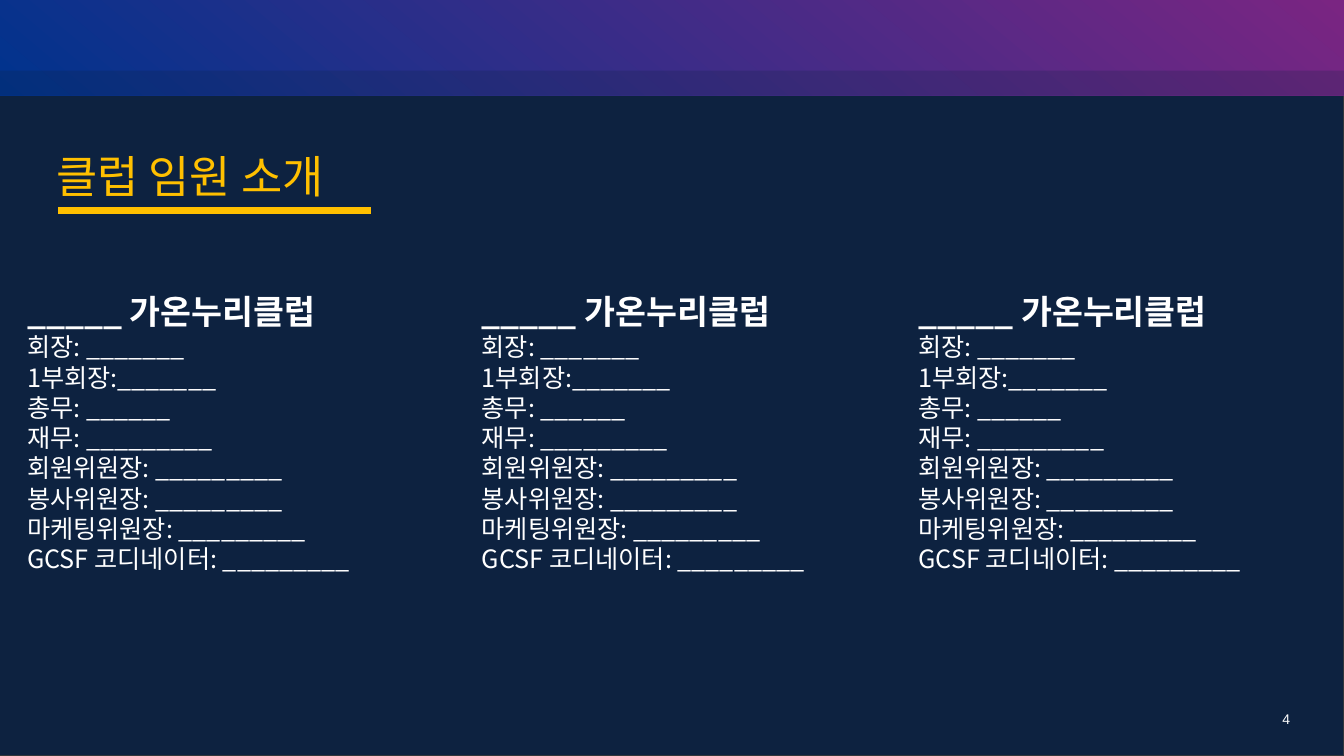
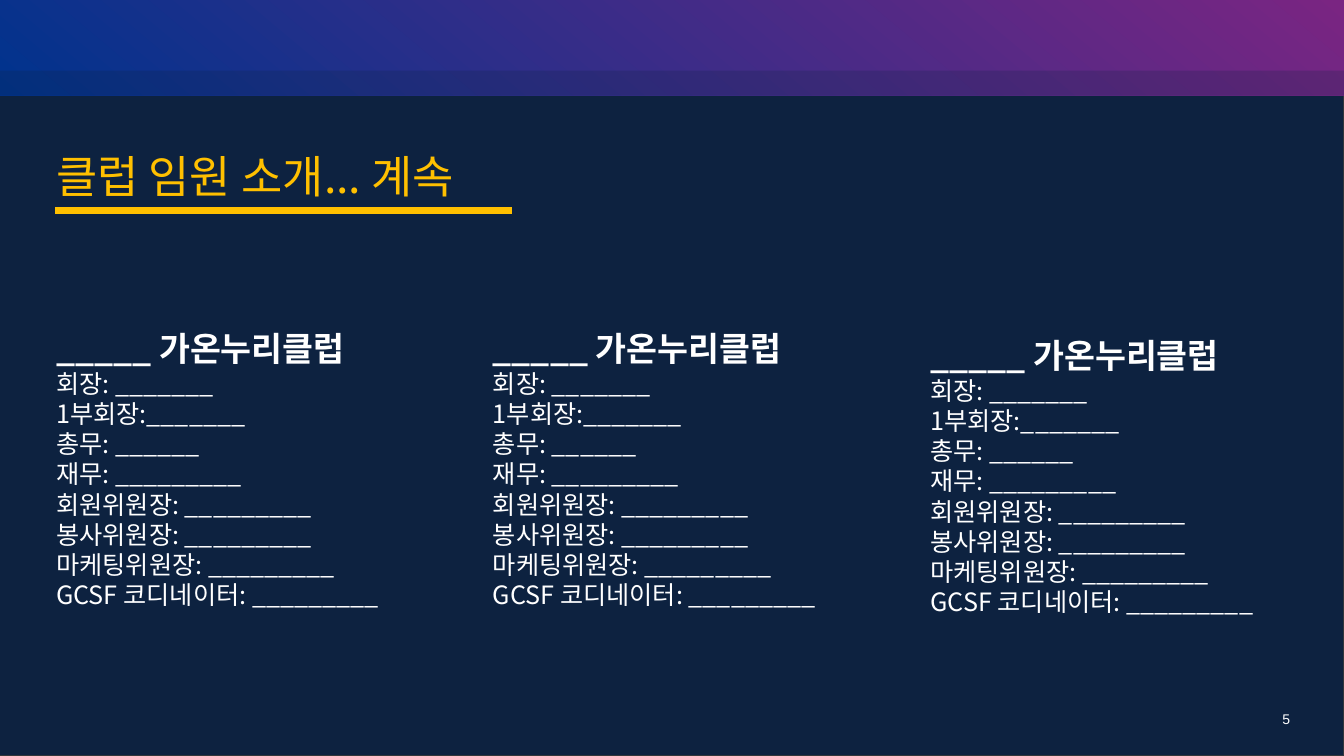
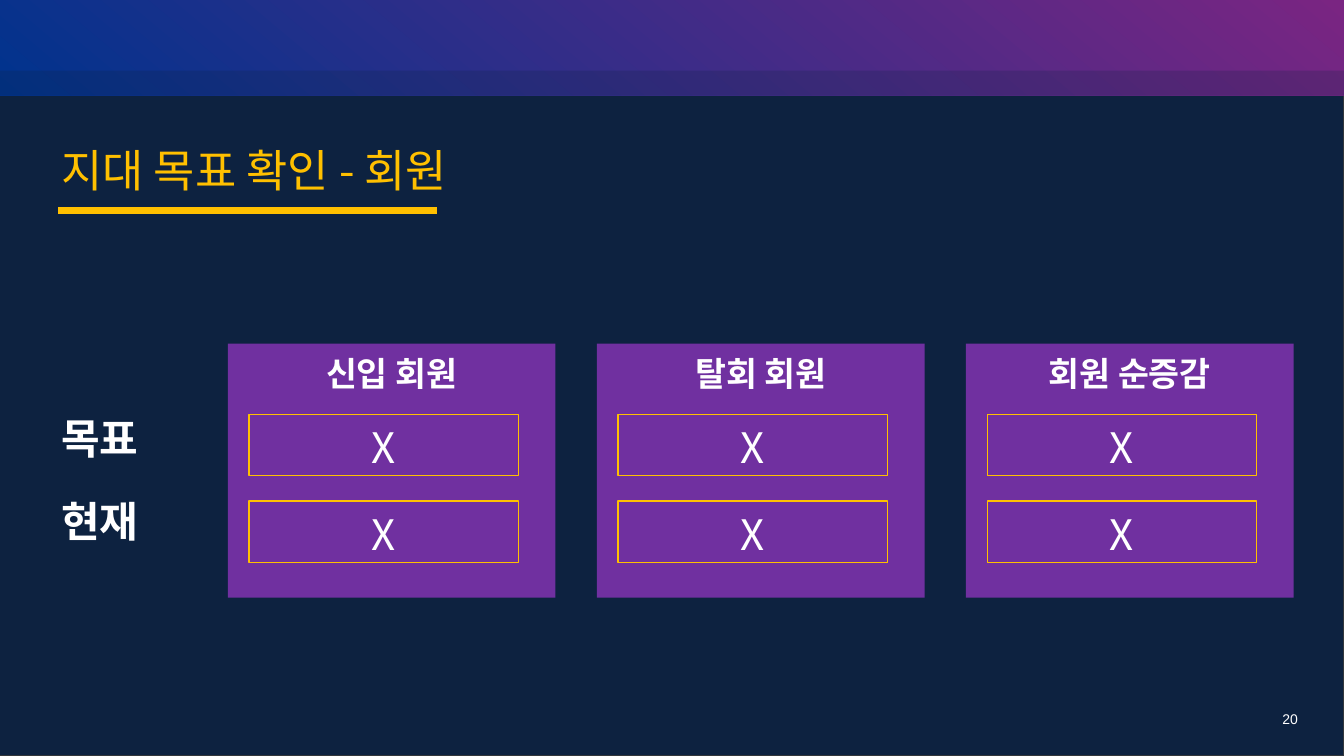
from lxml.etree import SubElement
from pptx import Presentation
from pptx.dml.color import RGBColor
from pptx.enum.shapes import MSO_CONNECTOR as Connector, MSO_SHAPE as Shape
from pptx.enum.text import MSO_ANCHOR as Anchor, PP_ALIGN as Align
from pptx.oxml.ns import qn
from pptx.util import Inches, Pt

KOREAN = "Noto Sans CJK KR"
WIDTH, HEIGHT = 13.33, 7.5
NAVY, GOLD, WHITE, PURPLE = "0D2240", "FFC000", "FFFFFF", "7030A0"
CLUB = "_____ 가온누리클럽"
OFFICERS = [
    "회장: _______",
    "1부회장:_______",
    "총무: ______",
    "재무: _________",
    "회원위원장: _________",
    "봉사위원장: _________",
    "마케팅위원장: _________",
    "GCSF 코디네이터: _________",
]


def color(value):
    return RGBColor.from_string(value)


class Deck:
    """Holds the shared style and the slide being built."""

    def __init__(self):
        self.deck = Presentation()
        self.deck.slide_width = Inches(WIDTH)
        self.deck.slide_height = Inches(HEIGHT)
        self.page = None

    def new_page(self, number):
        self.page = self.deck.slides.add_slide(self.deck.slide_layouts[6])
        self.rect(0, 0, WIDTH, HEIGHT, NAVY, "33373B")
        band = self.rect(0, 0, WIDTH, 0.95)
        band.fill.gradient()
        band.fill.gradient_angle = 50
        for stop, shade in zip(band.fill.gradient_stops, ("00338D", "7A2582")):
            stop.color.rgb = color(shade)
        strip = self.rect(0, 0.7, WIDTH, 0.25, NAVY)
        tint = strip._element.spPr.find(".//" + qn("a:srgbClr"))
        SubElement(tint, qn("a:alpha"), val="21000")
        box = self.text(12.62, 7, 0.71, 0.5)
        self.add_lines(box, [(str(number), 10, False)], font="Arial")

    def rect(self, left, top, width, height, fill=None, line=None):
        shape = self.page.shapes.add_shape(
            Shape.RECTANGLE, Inches(left), Inches(top), Inches(width), Inches(height))
        shape.shadow.inherit = False
        if fill:
            shape.fill.solid()
            shape.fill.fore_color.rgb = color(fill)
        else:
            shape.fill.background()
        if line:
            shape.line.color.rgb = color(line)
            shape.line.width = Pt(0.75)
        else:
            shape.line.fill.background()
        return shape

    def text(self, left, top, width, height):
        return self.page.shapes.add_textbox(
            Inches(left), Inches(top), Inches(width), Inches(height))

    def add_lines(self, shape, lines, ink=WHITE, align=Align.LEFT, anchor=Anchor.TOP, font=KOREAN):
        frame = shape.text_frame
        frame.word_wrap = True
        frame.vertical_anchor = anchor
        for index, (words, size, bold) in enumerate(lines):
            para = frame.add_paragraph() if index else frame.paragraphs[0]
            para.alignment = align
            if font == KOREAN:
                frame.margin_top = Inches(0.09)
                para.line_spacing = Pt(1.2 * size)
            span = para.add_run()
            span.text = words
            span.font.size = Pt(size)
            span.font.bold = bold
            span.font.color.rgb = color(ink)
            span.font.name = font
            SubElement(span._r.get_or_add_rPr(), qn("a:ea"), typeface=font)

    def title(self, words, left, top, line_start, line_end):
        self.add_lines(self.text(left, top, 8.5, 0.64), [(words, 32, False)], GOLD)
        rule = self.page.shapes.add_connector(
            Connector.STRAIGHT, Inches(line_start), Inches(2.09), Inches(line_end), Inches(2.09))
        rule.line.color.rgb = color(GOLD)
        rule.line.width = Pt(4.5)
        SubElement(rule._element.spPr, qn("a:effectLst"))

    def officers(self, left, top):
        lines = [(CLUB, 24, True)] + [(officer, 18, False) for officer in OFFICERS]
        self.add_lines(self.text(left, top, 4.17, 2.93), lines)

    def card(self, left, heading, values, tops):
        panel = self.rect(left, 3.41, 3.25, 2.52, PURPLE)
        self.add_lines(panel, [(heading, 24, True)], align=Align.CENTER)
        for value, top in zip(values, tops):
            field = self.rect(left + 0.21, top, 2.67, 0.61, line=GOLD)
            self.add_lines(field, [(value, 30, False)], align=Align.CENTER, anchor=Anchor.MIDDLE)


def main():
    show = Deck()

    show.new_page(4)
    show.title("클럽 임원 소개", 0.46, 1.39, 0.58, 3.68)
    for left in (0.17, 4.68, 9.01):
        show.officers(left, 2.8)

    show.new_page(5)
    show.title("클럽 임원 소개... 계속", 0.46, 1.39, 0.55, 5.08)
    for left, top in ((0.46, 3.16), (4.79, 3.16), (9.13, 3.23)):
        show.officers(left, top)

    show.new_page(20)
    show.title("지대 목표 확인 - 회원", 0.51, 1.33, 0.58, 4.33)
    for label, top in (("목표", 4), ("현재", 4.83)):
        show.add_lines(show.text(0.51, top, 1.75, 0.61), [(label, 30, True)])
    for index, heading in enumerate(("신입 회원", "탈회 회원", "회원 순증감")):
        show.card(2.26 + 3.66 * index, heading, ("X", "X"), (4.11, 4.97))

    show.deck.save("out.pptx")


if __name__ == "__main__":
    main()
